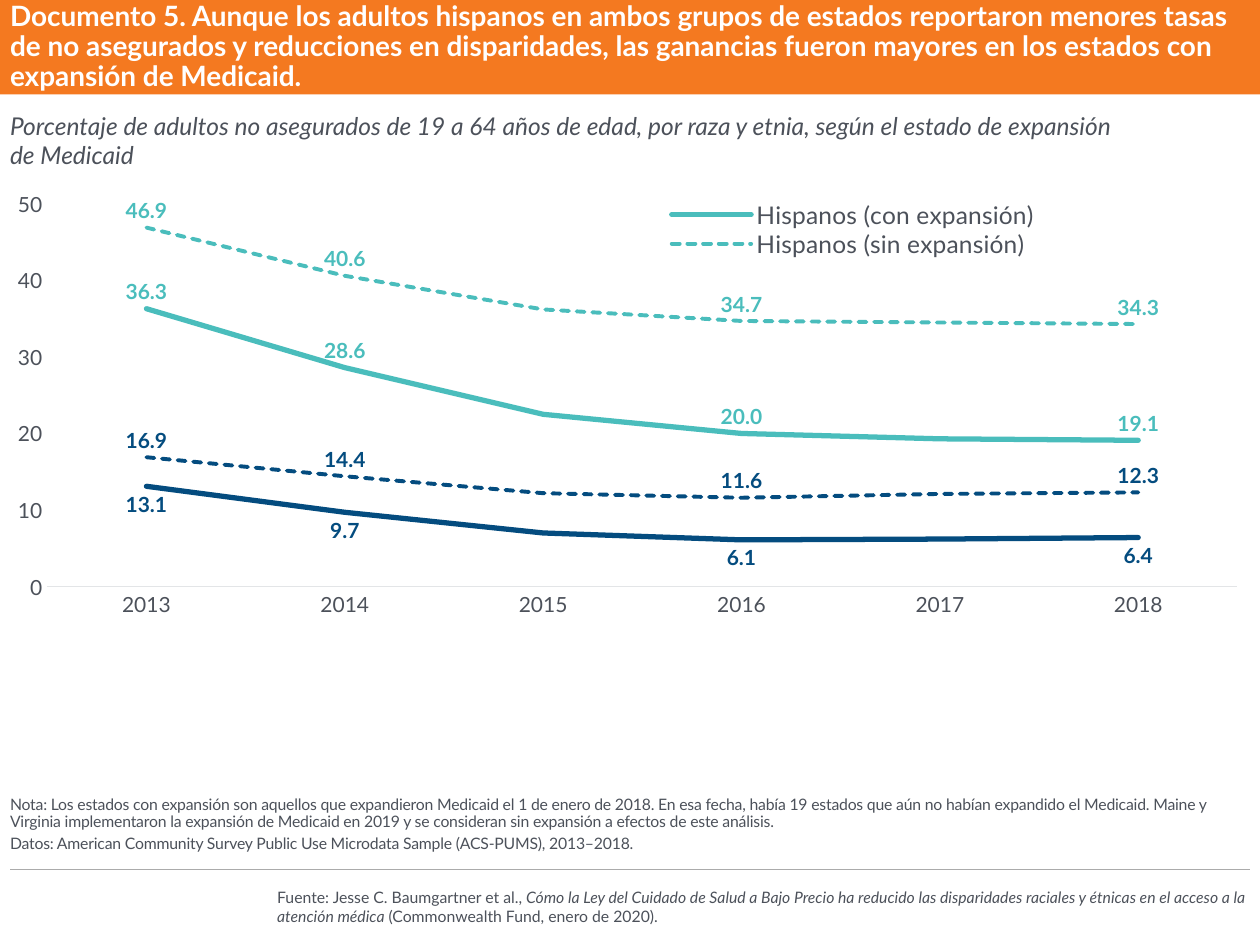
"""Build the slide on uninsured rates of Hispanic adults by Medicaid expansion."""
import lxml.etree
import pptx
import pptx.chart.data
import pptx.dml.color
import pptx.enum.chart
import pptx.enum.dml
import pptx.enum.shapes
import pptx.enum.text
import pptx.oxml
import pptx.oxml.ns
import pptx.util

Inches, Pt = pptx.util.Inches, pptx.util.Pt
qn = pptx.oxml.ns.qn
ANCHOR = pptx.enum.text.MSO_ANCHOR
LABEL = pptx.enum.chart.XL_LABEL_POSITION
FONT = "Lato"
COLORS = {"banner": "F47920", "white": "FFFFFF", "text": "4C515A", "rule": "ABABAB",
          "axis": "E3E5E7", "teal": "4ABDBC", "navy": "044C7F"}
MARGIN, CONTENT_WIDTH = 0.08, 9.84

TITLE = ("Documento 5. Aunque los adultos hispanos en ambos grupos de estados reportaron menores "
         "tasas de no asegurados y reducciones en disparidades, las ganancias fueron mayores en "
         "los estados con expansión de Medicaid.")
SUBTITLE = ("Porcentaje de adultos no asegurados de 19 a 64 años de edad, por raza y etnia, "
            "según el estado de expansión \vde Medicaid")
NOTES = [
    "Nota: Los estados con expansión son aquellos que expandieron Medicaid el 1 de enero de 2018. "
    "En esa fecha, había 19 estados que aún no habían expandido el Medicaid. Maine y Virginia "
    "implementaron la expansión de Medicaid en 2019 y se consideran sin expansión a efectos de "
    "este análisis.",
    "Datos: American Community Survey Public Use Microdata Sample (ACS-PUMS), 2013–2018.",
]
SOURCE = [
    ("Fuente: Jesse C. Baumgartner et al., ", False),
    ("Cómo la Ley del Cuidado de Salud a Bajo Precio ha reducido las disparidades raciales y "
     "étnicas en el acceso a la atención médica", True),
    (" (Commonwealth Fund, enero de 2020).", False),
]
YEARS = ["2013", "2014", "2015", "2016", "2017", "2018"]
UNLABELED_YEARS = ["2015", "2017"]
RATES = [
    ("Hispanos (con expansión)", [36.3, 28.6, 22.5, 20.0, 19.3, 19.1], "teal", False, LABEL.ABOVE),
    ("Hispanos (sin expansión)", [46.9, 40.6, 36.2, 34.7, 34.5, 34.3], "teal", True, LABEL.ABOVE),
    ("", [13.1, 9.7, 7.0, 6.1, 6.2, 6.4], "navy", False, LABEL.BELOW),
    ("", [16.9, 14.4, 12.2, 11.6, 12.1, 12.3], "navy", True, LABEL.ABOVE),
]
PLOT_LAYOUT = {"layoutTarget": "inner", "xMode": "edge", "yMode": "edge",
               "x": 0.03, "y": 0.02, "w": 0.96, "h": 0.87}
LEGEND_LAYOUT = {"xMode": "edge", "yMode": "edge", "x": 0.53, "y": 0.01, "w": 0.3, "h": 0.13}


def rgb(key):
    return pptx.dml.color.RGBColor.from_string(COLORS[key])


def style_font(font, size, color="text", bold=False, italic=False):
    font.name, font.size, font.bold, font.italic = FONT, Pt(size), bold, italic
    font.color.rgb = rgb(color)


def element(tag, children=(), **attributes):
    node = pptx.oxml.parse_xml(
        f'<c:{tag} xmlns:c="http://schemas.openxmlformats.org/drawingml/2006/chart"/>')
    for key, value in attributes.items():
        node.set(key, str(value))
    node.extend(children)
    return node


def manual_layout(values):
    parts = [element(key, val=value) for key, value in values.items()]
    return element("layout", [element("manualLayout", parts)])


def prepare_frame(shape, anchor):
    frame = shape.text_frame
    frame.margin_left = frame.margin_right = frame.margin_top = frame.margin_bottom = 0
    frame.word_wrap = True
    frame.auto_size = pptx.enum.text.MSO_AUTO_SIZE.NONE
    frame.vertical_anchor = anchor
    return frame


def add_text(slide, left, top, width, height, anchor=ANCHOR.MIDDLE):
    box = slide.shapes.add_textbox(Inches(left), Inches(top), Inches(width), Inches(height))
    return prepare_frame(box, anchor)


def add_banner(slide):
    banner = slide.shapes.add_shape(pptx.enum.shapes.MSO_SHAPE.RECTANGLE, 0, 0, Inches(10), Inches(0.75))
    banner.shadow.inherit = False
    banner.fill.solid()
    banner.fill.fore_color.rgb = rgb("banner")
    banner.line.fill.background()
    title = slide.shapes.title
    title.element.addprevious(banner.element)
    title.left, title.top = Inches(MARGIN), 0
    title.width, title.height = Inches(CONTENT_WIDTH), Inches(0.75)
    paragraph = prepare_frame(title, ANCHOR.MIDDLE).paragraphs[0]
    paragraph.text = TITLE
    paragraph.alignment = pptx.enum.text.PP_ALIGN.LEFT
    paragraph.line_spacing = 0.9
    style_font(paragraph.runs[0].font, 16, "white", bold=True)


def add_footer(slide):
    rule = slide.shapes.add_connector(pptx.enum.shapes.MSO_CONNECTOR.STRAIGHT,
                                      Inches(MARGIN + CONTENT_WIDTH), Inches(6.9), Inches(MARGIN), Inches(6.9))
    rule.line.color.rgb = rgb("rule")
    rule.line.width = Pt(0.75)
    lxml.etree.SubElement(rule.element.spPr, qn("a:effectLst"))
    citation = add_text(slide, 2.2, 7.05, 7.75, 0.3).paragraphs[0]
    for text, italic in SOURCE:
        run = citation.add_run()
        run.text = text
        style_font(run.font, 9, italic=italic)
    frame = add_text(slide, MARGIN, 6.23, CONTENT_WIDTH, 0.54, ANCHOR.BOTTOM)
    frame.text = "\n".join(NOTES)
    for paragraph in frame.paragraphs:
        paragraph.line_spacing, paragraph.space_after = 0.9, Pt(3)
        for run in paragraph.runs:
            style_font(run.font, 9)
            run.font._element.set("spc", "-10")


def style_series(series, color, dashed, position):
    series.smooth = False
    series.marker.style = pptx.enum.chart.XL_MARKER_STYLE.NONE
    line = series.format.line
    line.color.rgb = rgb(color)
    line.width = Pt(2.25 if dashed else 3)
    if dashed:
        line.dash_style = pptx.enum.dml.MSO_LINE.SQUARE_DOT
    line._ln.set("cap", "rnd")
    labels = series.data_labels
    labels.show_value, labels.position = True, position
    labels.number_format, labels.number_format_is_linked = "0.0", False
    style_font(labels.font, 12, color, bold=True)
    for order, year in enumerate(UNLABELED_YEARS):
        unlabeled = [element("idx", val=YEARS.index(year)), element("delete", val=1)]
        labels._element.insert(order, element("dLbl", unlabeled))


def add_rate_chart(slide):
    data = pptx.chart.data.CategoryChartData(number_format="0.0")
    data.categories = YEARS
    for name, values, *_ in RATES:
        data.add_series(name, values)
    chart = slide.shapes.add_chart(pptx.enum.chart.XL_CHART_TYPE.LINE, Inches(MARGIN), Inches(1.52),
                                   Inches(CONTENT_WIDTH), Inches(3.52), data).chart
    style_font(chart.font, 10)
    chart.has_title = False
    plot = chart.plots[0]
    plot.vary_by_categories = False
    for series, (_, _, color, dashed, position) in zip(plot.series, RATES):
        style_series(series, color, dashed, position)

    years, rates = chart.category_axis, chart.value_axis
    for axis in (years, rates):
        axis.has_major_gridlines = False
        axis.major_tick_mark = axis.minor_tick_mark = pptx.enum.chart.XL_TICK_MARK.NONE
        style_font(axis.tick_labels.font, 12)
    years.format.line.color.rgb = rgb("axis")
    years.format.line.width = Pt(0.75)
    rates.format.line.fill.background()
    rates.minimum_scale, rates.maximum_scale, rates.major_unit = 0, 50, 10
    rates.tick_labels.number_format = "0"
    rates.tick_labels.number_format_is_linked = False

    chart.has_legend = True
    legend = chart.legend
    legend.position = pptx.enum.chart.XL_LEGEND_POSITION.BOTTOM
    legend.include_in_layout = False
    style_font(legend.font, 14)
    for old in legend._element.findall(qn("c:layout")):
        legend._element.remove(old)
    unnamed = [element("legendEntry", [element("idx", val=index), element("delete", val=1)])
               for index, (name, *_) in enumerate(RATES) if not name]
    anchor = legend._element.find(qn("c:legendPos"))
    for node in reversed(unnamed + [manual_layout(LEGEND_LAYOUT)]):
        anchor.addnext(node)
    plot_area = chart._chartSpace.chart.plotArea
    for old in plot_area.findall(qn("c:layout")):
        plot_area.remove(old)
    plot_area.insert(0, manual_layout(PLOT_LAYOUT))


def main():
    deck = pptx.Presentation()
    deck.slide_width, deck.slide_height = Inches(10), Inches(7.5)
    slide = deck.slides.add_slide(deck.slide_layouts[5])
    add_banner(slide)
    add_footer(slide)
    add_rate_chart(slide)
    subtitle = add_text(slide, MARGIN, 0.88, 9, 0.47).paragraphs[0]
    subtitle.text = SUBTITLE
    for run in subtitle.runs:
        style_font(run.font, 14, italic=True)
    deck.save("out.pptx")


if __name__ == "__main__":
    main()
